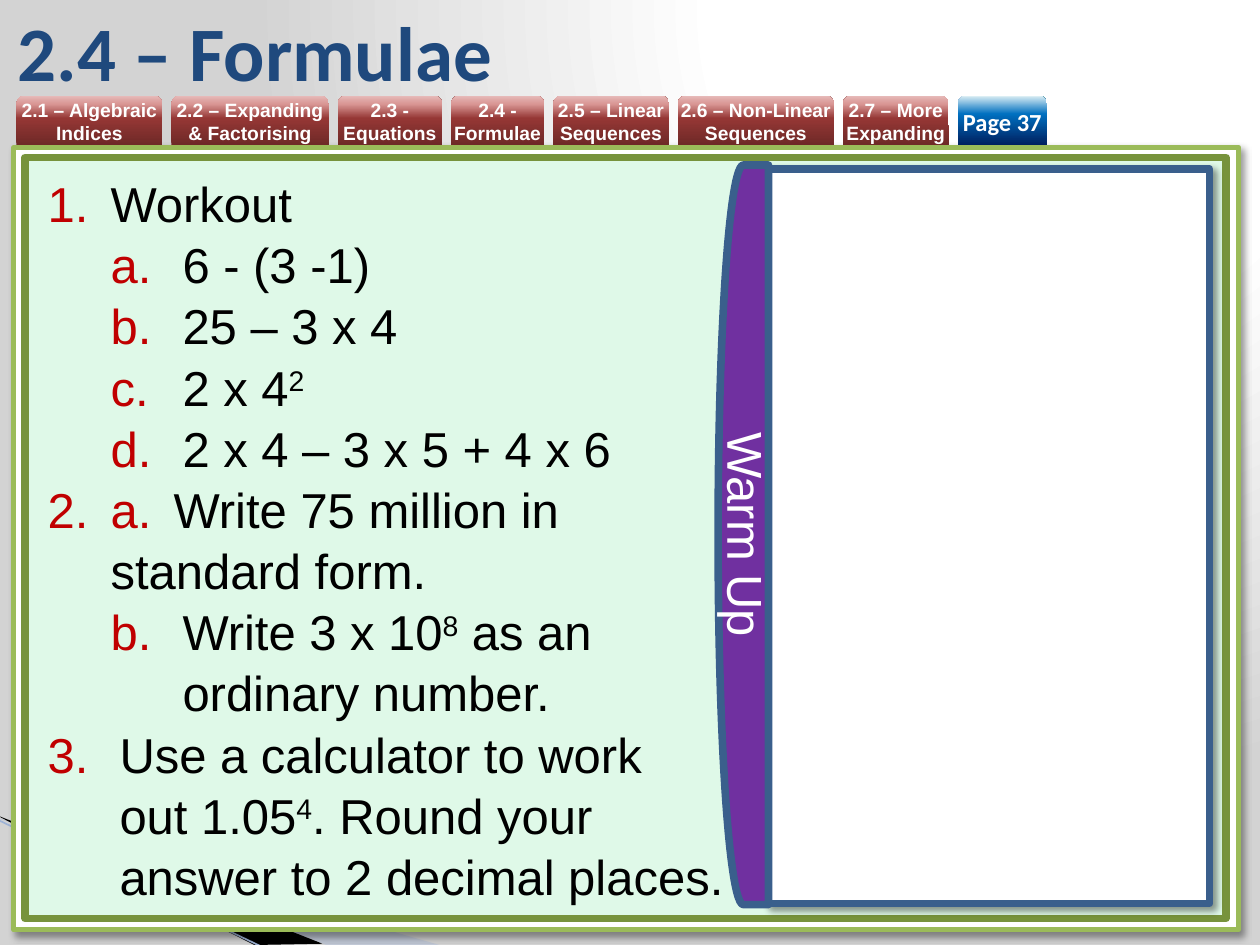
from pptx import Presentation
from pptx.dml.color import RGBColor
from pptx.enum.shapes import MSO_CONNECTOR, MSO_SHAPE
from pptx.enum.text import MSO_ANCHOR, PP_ALIGN
from pptx.oxml import parse_xml
from pptx.oxml.ns import nsdecls, qn
from pptx.util import Inches, Pt

WHITE = RGBColor(0xFF, 0xFF, 0xFF)
BLACK = RGBColor(0, 0, 0)
RED = RGBColor(0xC0, 0, 0)
NAVY = RGBColor(0x1F, 0x49, 0x7D)
STEEL = RGBColor(0x3A, 0x5F, 0x8C)
PALE = RGBColor(0xA7, 0xB9, 0xDB)
MIST = RGBColor(0x9E, 0xB3, 0xD6)
LIME = RGBColor(0x9B, 0xBB, 0x59)
OLIVE = RGBColor(0x77, 0x93, 0x3C)
MINT = RGBColor(0xDF, 0xF9, 0xE8)
PURPLE = RGBColor(0x70, 0x30, 0xA0)
SILVER = RGBColor(0xD3, 0xD3, 0xD3)

BRICK = [(0, RGBColor(0x6F, 0x29, 0x27)), (54, RGBColor(0x95, 0x37, 0x35)),
         (83, RGBColor(0xD9, 0x96, 0x94)), (100, RGBColor(0xE6, 0xB9, 0xB8))]
OCEAN = [(0, RGBColor(0, 0x20, 0x60)), (63, RGBColor(0, 0x70, 0xC0)),
         (100, RGBColor(0xDB, 0xEE, 0xF4))]
GLOW = [(0, WHITE), (40, WHITE), (100, SILVER)]

UPWARD = '<a:lin ang="16200000" scaled="0"/>'
RADIAL = ('<a:path path="circle">'
          '<a:fillToRect l="65000" t="0" r="0" b="98000"/></a:path>')

TAB_GAP = 0.07
TABS = [("2.1 – Algebraic Indices", 1.16), ("2.2 – Expanding & Factorising", 1.25),
        ("2.3 - Equations", 0.83), ("2.4 - Formulae", 0.74),
        ("2.5 – Linear Sequences", 0.92), ("2.6 – Non-Linear Sequences", 1.24),
        ("2.7 – More Expanding", 0.84)]

# level, left margin, hanging indent, tab stop, first number, (text, raised) runs
TASKS = [
    (0, 0.5, 0.5, 0.94, 1, [("Workout", False)]),
    (1, 1.07, 0.57, 1, 1, [("6 - (3 -1)", False)]),
    (1, 1.07, 0.57, 1, 1, [("25 – 3 x 4", False)]),
    (1, 1.07, 0.57, 1, 1, [("2 x 4", False), ("2", True)]),
    (1, 1.07, 0.57, 1, 1, [("2 x 4 – 3 x 5 + 4 x 6", False)]),
    (0, 0.5, 0.5, 1, 1, [("a.", False), (" \tWrite 75 million in standard form.", False)]),
    (1, 1.07, 0.57, 0.94, 2, [("Write 3 x 10", False), ("8", True),
                              (" as an ordinary number.", False)]),
    (0, 0.57, 0.57, 0.94, 1, [("Use a calculator to work\vout 1.05", False), ("4", True),
                              (". Round your answer to 2 decimal places.", False)]),
]


def blend(owner, fill, stops, course):
    """Give the fill found in the owner element a gradient of many stops."""
    fill.gradient()
    old = owner.find(".//" + qn("a:gradFill"))
    marks = "".join(f'<a:gs pos="{pos * 1000}"><a:srgbClr val="{tint}"/></a:gs>'
                    for pos, tint in stops)
    new = parse_xml(f'<a:gradFill {nsdecls("a")} rotWithShape="1">'
                    f'<a:gsLst>{marks}</a:gsLst>{course}</a:gradFill>')
    old.getparent().replace(old, new)


def add_run(para, text, size, tint, bold=False, face="Arial"):
    run = para.add_run()
    run.text = text
    run.font.size = Pt(size)
    run.font.name = face
    run.font.bold = bold
    run.font.color.rgb = tint
    return run


def add_form(slide, kind, box, fill=None, line=None, width=0):
    form = slide.shapes.add_shape(kind, *map(Inches, box))
    form.shadow.inherit = False
    if fill is not None:
        form.fill.solid()
        form.fill.fore_color.rgb = fill
    if line is None:
        form.line.fill.background()
    else:
        form.line.color.rgb = line
        form.line.width = Pt(width)
    return form


def add_shade(form):
    shade = parse_xml(
        f'<a:outerShdw {nsdecls("a")} blurRad="{Pt(4)}" dist="{Pt(3)}" dir="2700000" '
        'algn="tl" rotWithShape="0"><a:srgbClr val="000000"><a:alpha val="40000"/>'
        '</a:srgbClr></a:outerShdw>')
    form.element.spPr.find(qn("a:effectLst")).append(shade)


def add_wedge(slide, points, tint):
    start, *rest = [(Inches(x), Inches(y)) for x, y in points]
    pen = slide.shapes.build_freeform(*start)
    pen.add_line_segments(rest, close=True)
    wedge = pen.convert_to_shape()
    wedge.shadow.inherit = False
    wedge.fill.solid()
    wedge.fill.fore_color.rgb = tint
    wedge.line.fill.background()
    return wedge


def add_swoosh(slide):
    """Draw the slanted bands in the lower left corner."""
    band = add_wedge(slide, [(-0.01, 6.5), (3.49, 7.5), (2.59, 7.5), (-0.01, 6.49)], PALE)
    tint = band.element.spPr.find(qn("a:solidFill"))[0]
    tint.append(parse_xml(f'<a:alpha {nsdecls("a")} val="40000"/>'))
    add_wedge(slide, [(0, 6.48), (2.56, 7.49), (2.02, 7.5), (0.01, 6.49)], BLACK)
    edge = slide.shapes.add_connector(
        MSO_CONNECTOR.STRAIGHT, *map(Inches, (-0.01, 6.51, 2.09, 7.52)))
    edge.line.color.rgb = MIST
    edge.line.width = Pt(0.95)
    edge.element.spPr.append(parse_xml(f'<a:effectLst {nsdecls("a")}/>'))


def add_panels(slide):
    add_shade(add_form(slide, MSO_SHAPE.RECTANGLE, (0.11, 1.17, 9.72, 6.21), WHITE, LIME, 3))
    add_form(slide, MSO_SHAPE.RECTANGLE, (0.2, 1.25, 9.53, 6.04), MINT, OLIVE, 4.33)
    add_shade(add_form(slide, MSO_SHAPE.RECTANGLE, (6.1, 1.34, 3.5, 5.83), WHITE, STEEL, 4.33))


def add_tab(slide, text, left, width, stops, size, face):
    tab = add_form(slide, MSO_SHAPE.ROUND_2_SAME_RECTANGLE, (left, 0.76, width, 0.39))
    blend(tab.element, tab.fill, stops, UPWARD)
    frame = tab.text_frame
    frame.margin_left = frame.margin_right = frame.margin_top = frame.margin_bottom = 0
    frame.vertical_anchor = MSO_ANCHOR.MIDDLE
    para = frame.paragraphs[0]
    para.alignment = PP_ALIGN.CENTER
    add_run(para, text, size, WHITE, True, face)


def add_tabs(slide):
    left = 0.13
    for text, width in TABS:
        add_tab(slide, text, left, width, BRICK, 11, "Arial")
        left += width + TAB_GAP
    add_tab(slide, "Page 37", left, 0.71, OCEAN, 14, "Calibri")


def set_number(para, level, margin, hang, stop, first):
    props = para._p.get_or_add_pPr()
    props.set("marL", str(Inches(margin)))
    props.set("indent", str(-Inches(hang)))
    style = "alphaLcPeriod" if level else "arabicPeriod"
    start = f' startAt="{first}"' if first > 1 else ""
    for part in (f'<a:buClr {nsdecls("a")}><a:srgbClr val="{RED}"/></a:buClr>',
                 f'<a:buAutoNum {nsdecls("a")} type="{style}"{start}/>',
                 f'<a:tabLst {nsdecls("a")}><a:tab pos="{Inches(stop)}" algn="l"/></a:tabLst>'):
        props.append(parse_xml(part))
    para.level = level
    para.line_spacing = 1.04


def add_tasks(slide):
    frame = slide.shapes.add_textbox(*map(Inches, (0.28, 1.31, 5.75, 5.76))).text_frame
    frame.word_wrap = True
    for i, (level, margin, hang, stop, first, runs) in enumerate(TASKS):
        para = frame.add_paragraph() if i else frame.paragraphs[0]
        set_number(para, level, margin, hang, stop, first)
        for text, raised in runs:
            for j, piece in enumerate(text.split("\v")):
                if j:
                    para.add_line_break()
                run = add_run(para, piece, 28, RED if text == "a." else BLACK)
                if raised:
                    run.font._element.set("baseline", "30000")


def set_title(slide):
    title = slide.shapes.title
    title.left, title.top, title.width, title.height = map(Inches, (0.04, 0.05, 8.27, 0.71))
    title.text_frame.vertical_anchor = MSO_ANCHOR.MIDDLE
    para = title.text_frame.paragraphs[0]
    para.alignment = PP_ALIGN.LEFT
    add_run(para, "2.4 – Formulae", 44, NAVY, True, "Calibri")


def add_spine(slide):
    spine = add_form(slide, MSO_SHAPE.FLOWCHART_DELAY, (5.7, 1.31, 0.4, 5.87),
                     PURPLE, STEEL, 4.33)
    spine.element.spPr.find(qn("a:xfrm")).set("flipH", "1")
    frame = spine.text_frame
    frame.vertical_anchor = MSO_ANCHOR.MIDDLE
    frame._txBody.bodyPr.set("vert", "vert")
    para = frame.paragraphs[0]
    para.alignment = PP_ALIGN.CENTER
    add_run(para, "Warm Up", 28, WHITE)


def main():
    deck = Presentation()
    deck.slide_width, deck.slide_height = Inches(10), Inches(7.5)
    slide = deck.slides.add_slide(deck.slide_layouts[5])
    blend(slide.element, slide.background.fill, GLOW, RADIAL)
    add_swoosh(slide)
    add_panels(slide)
    add_tabs(slide)
    add_tasks(slide)
    set_title(slide)
    add_spine(slide)
    deck.save("out.pptx")


if __name__ == "__main__":
    main()
